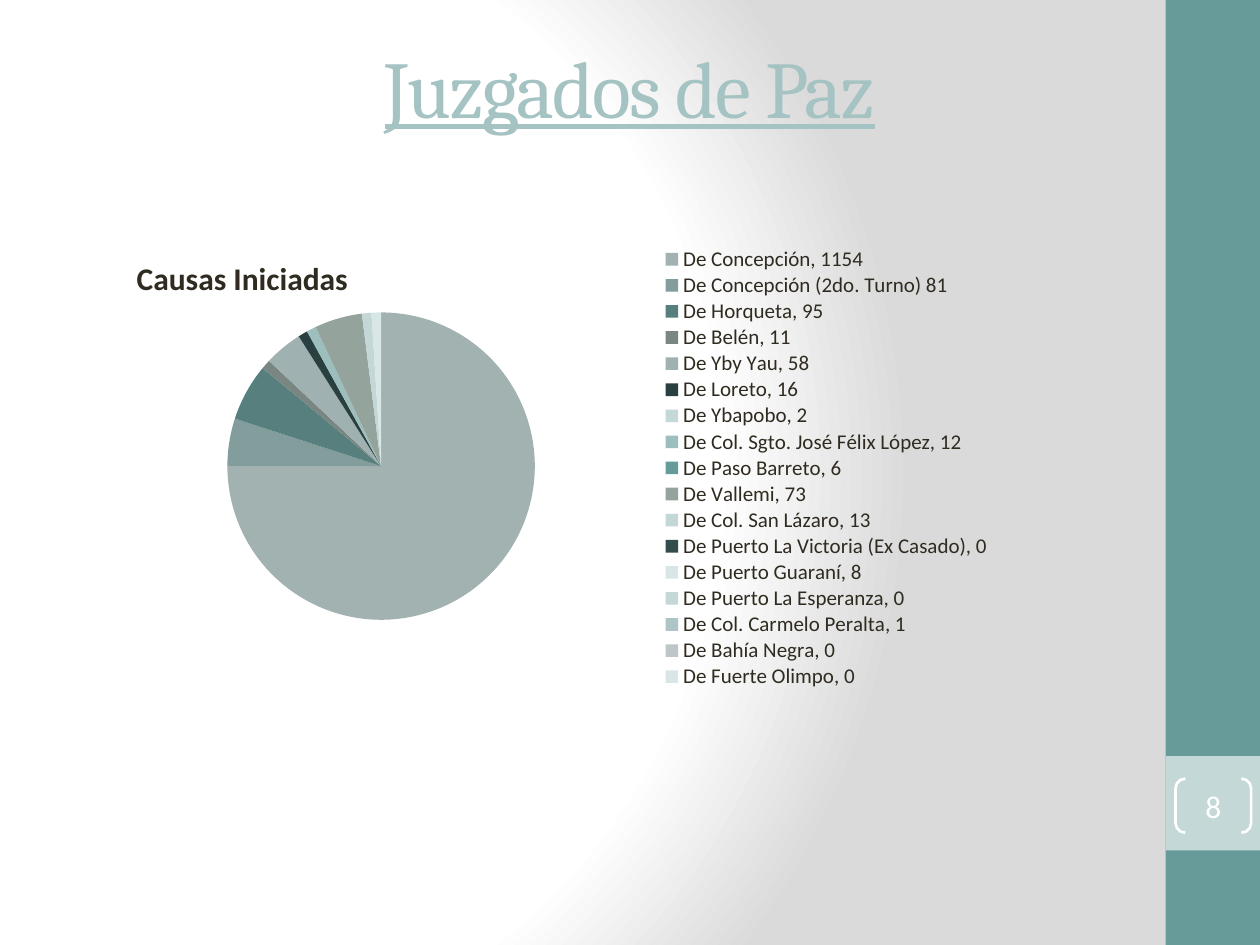
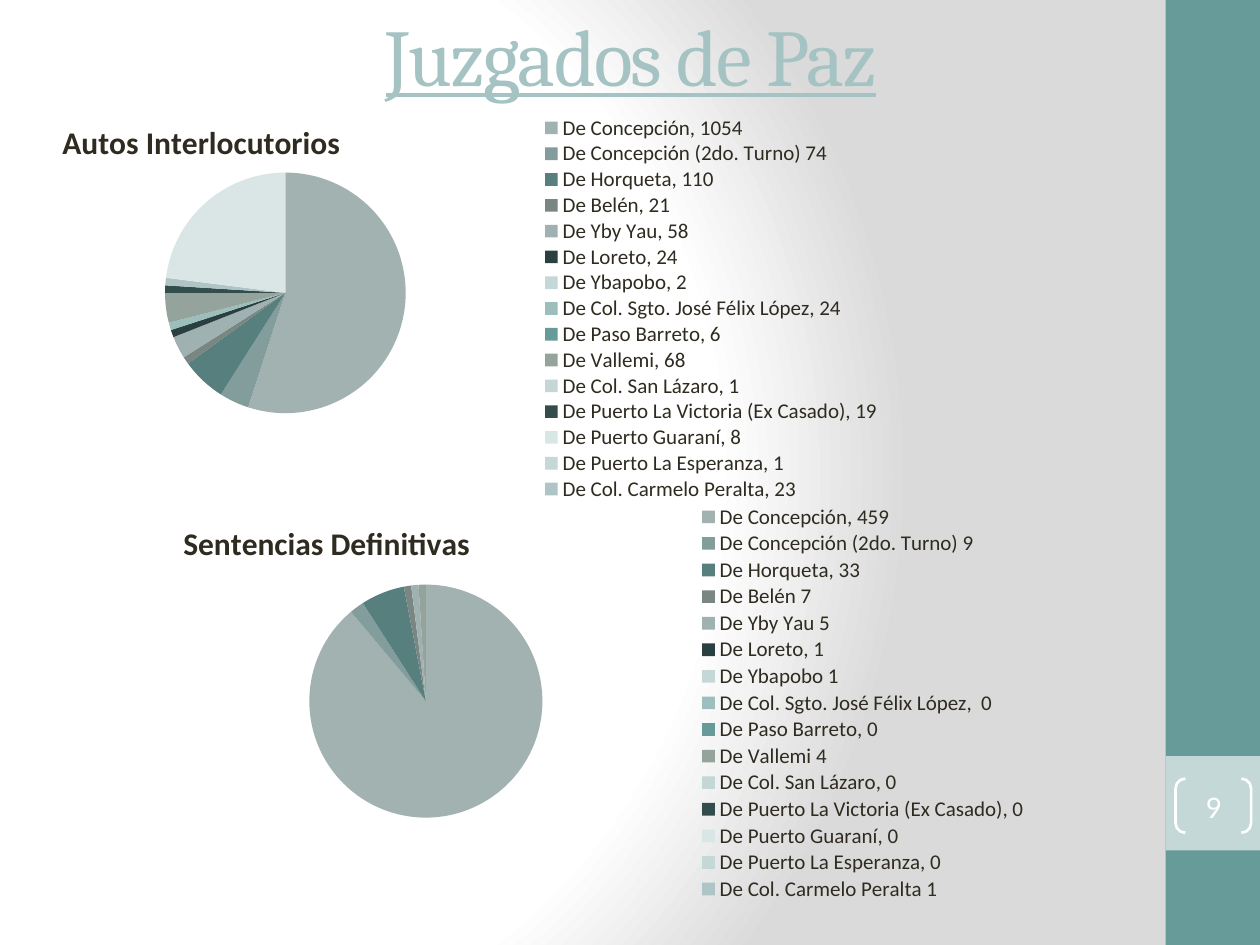
from lxml import etree
from pptx import Presentation
from pptx import util as u
from pptx.chart.data import CategoryChartData
from pptx.dml.color import RGBColor
from pptx.enum import chart as charts, shapes, text
from pptx.oxml import parse_xml
from pptx.oxml.ns import nsdecls, qn

WHITE, TEAL, PALE_TEAL = "FFFFFF", "679B9A", "C3D8D7"
TITLE_COLOR, INK, SHADE = "A4C3C2", "2F2B20", "DADADA"
SLICE_COLORS = (
    "A1B2B1", "829D9B", "567F7E", "7A8682", "A0B1B1", "2A3F3F",
    "C3D8D7", "9CBEBD", "679B9A", "95A39D", "C2D7D6", "334D4D",
    "D9E6E6", "C3D8D7", "AEC4C6", "BFC6C8", "D9E6E5",
)
COURTS = (
    "Concepción", "Concepción (2do. Turno)", "Horqueta", "Belén", "Yby Yau",
    "Loreto", "Ybapobo", "Col. Sgto. José Félix López", "Paso Barreto",
    "Vallemi", "Col. San Lázaro", "Puerto La Victoria (Ex Casado)",
    "Puerto Guaraní", "Puerto La Esperanza", "Col. Carmelo Peralta",
    "Bahía Negra", "Fuerte Olimpo",
)
STARTED_CASES = (", 1154", " 81", ", 95", ", 11", ", 58", ", 16", ", 2", ", 12", ", 6",
                 ", 73", ", 13", ", 0", ", 8", ", 0", ", 1", ", 0", ", 0")
INTERLOCUTORY_ORDERS = (", 1054", " 74", ", 110", ", 21", ", 58", ", 24", ", 2", ", 24",
                        ", 6", ", 68", ", 1", ", 19", ", 8", ", 1", ", 23", ", 0", ", 434")
FINAL_JUDGMENTS = (", 459", " 9", ", 33", " 7", " 5", ", 1", " 1", ",  0", ", 0",
                   " 4", ", 0", ", 0", ", 0", ", 0", " 1", ", 0", ", 0")


def color(value):
    return RGBColor.from_string(value)


def inches(box):
    return [u.Inches(length) for length in box]


def apply_format(target, values):
    for name, value in values.items():
        setattr(target, name, value)


def format_font(font, face, size, ink, **extra):
    apply_format(font, {"name": face, "size": u.Pt(size), **extra})
    font.color.rgb = color(ink)


def write_line(shape, words, face, size, ink, **extra):
    frame = shape.text_frame
    apply_format(frame, {"word_wrap": True, "vertical_anchor": text.MSO_ANCHOR.MIDDLE})
    paragraph = frame.paragraphs[0]
    paragraph.alignment = text.PP_ALIGN.CENTER
    run = paragraph.add_run()
    run.text = words
    format_font(run.font, face, size, ink, **extra)
    return run


def add_background(slide):
    slide.background.fill.solid()
    solid = slide.background._cSld.bg.bgPr[0]
    stops = "".join(
        f'<a:gs pos="{place * 1000}"><a:srgbClr val="{tint}"/></a:gs>'
        for place, tint in ((0, WHITE), (75, WHITE), (100, SHADE)))
    gradient = parse_xml(
        f'<a:gradFill {nsdecls("a")} rotWithShape="1"><a:gsLst>{stops}</a:gsLst>'
        '<a:path path="circle"><a:fillToRect l="20000" t="50000" r="100000" b="50000"/>'
        '</a:path></a:gradFill>')
    solid.getparent().replace(solid, gradient)


def add_block(slide, box, fill):
    block = slide.shapes.add_shape(shapes.MSO_SHAPE.RECTANGLE, *inches(box))
    block.shadow.inherit = False
    block.fill.solid()
    block.fill.fore_color.rgb = color(fill)
    block.line.fill.background()


def add_title(slide, left, top):
    title = slide.shapes.add_textbox(*inches((left, top, 9, 0.77)))
    run = write_line(title, "Juzgados de Paz", "Cambria", 46, TITLE_COLOR, underline=True)
    run.font._element.set("spc", "-100")


def add_page_number(slide, number):
    bracket = slide.shapes.add_shape(shapes.MSO_SHAPE.DOUBLE_BRACKET,
                                     *inches((9.33, 6.18, 0.6, 0.43)))
    bracket.shadow.inherit = False
    bracket.adjustments[0] = 0.18
    bracket.fill.background()
    bracket.line.color.rgb = color(WHITE)
    bracket.line.width = u.Pt(1.5)
    apply_format(bracket.text_frame, {f"margin_{side}": 0
                                      for side in ("left", "top", "right", "bottom")})
    write_line(bracket, str(number), "Calibri", 18, WHITE)


def place_part(parent, previous, place, chart_size, inner=False):
    for old in parent.findall(qn("c:layout")):
        parent.remove(old)
    layout = etree.Element(qn("c:layout"))
    manual = etree.SubElement(layout, qn("c:manualLayout"))
    fractions = [length / whole for length, whole in zip(place, chart_size * 2)]
    settings = [("layoutTarget", "inner")] if inner else []
    settings += [("xMode", "edge"), ("yMode", "edge"), *zip("xywh", fractions)]
    for name, value in settings:
        etree.SubElement(manual, qn(f"c:{name}")).set("val", str(value))
    if previous is None:
        parent.insert(0, layout)
    else:
        previous.addnext(layout)


def hide_legend_entries(legend, count):
    position = legend.find(qn("c:legendPos"))
    for index in reversed(range(len(COURTS) - count, len(COURTS))):
        position.addnext(parse_xml(
            f'<c:legendEntry {nsdecls("c")}><c:idx val="{index}"/>'
            '<c:delete val="1"/></c:legendEntry>'))


def add_pie(slide, box, name, tails, title_at, plot_at, legend_at, hidden=0):
    size = box[2:]
    counts = [int(tail.strip(", ")) for tail in tails]
    data = CategoryChartData()
    data.categories = [f"De {court}{tail}" for court, tail in zip(COURTS, tails)]
    data.add_series(name, [round(100 * count / sum(counts)) for count in counts])
    chart = slide.shapes.add_chart(charts.XL_CHART_TYPE.PIE, *inches(box), data).chart
    format_font(chart.font, "Calibri", 10, INK)
    root = chart.element.find(qn("c:chart"))
    root.addnext(parse_xml(
        f'<c:spPr {nsdecls("c", "a")}><a:noFill/><a:ln><a:noFill/></a:ln></c:spPr>'))

    plot = chart.plots[0]
    plot.vary_by_categories = True
    for index, tint in enumerate(SLICE_COLORS):
        fill = plot.series[0].points[index].format.fill
        fill.solid()
        fill.fore_color.rgb = color(tint)
    place_part(root.find(qn("c:plotArea")), None, plot_at, size, inner=True)

    chart.has_title = True
    run = chart.chart_title.text_frame.paragraphs[0].add_run()
    run.text = name
    format_font(run.font, "Calibri", 18, INK, bold=True)
    title = root.find(qn("c:title"))
    place_part(title, title.find(qn("c:tx")), title_at, size)

    chart.has_legend = True
    apply_format(chart.legend, {"position": charts.XL_LEGEND_POSITION.RIGHT,
                                "include_in_layout": False})
    format_font(chart.legend.font, "Calibri", 12, INK)
    legend = root.find(qn("c:legend"))
    place_part(legend, legend.find(qn("c:legendPos")), legend_at, size)
    hide_legend_entries(legend, hidden)


def add_court_slide(presentation, number, title_left, title_top):
    slide = presentation.slides.add_slide(presentation.slide_layouts[6])
    add_background(slide)
    add_block(slide, (9.25, 0, 0.75, 7.5), TEAL)
    add_block(slide, (9.25, 6, 0.75, 0.75), PALE_TEAL)
    add_title(slide, title_left, title_top)
    add_page_number(slide, number)
    return slide


def main():
    presentation = Presentation()
    presentation.slide_width, presentation.slide_height = inches((10, 7.5))

    slide = add_court_slide(presentation, 8, 0.5, 0.3)
    add_pie(slide, (0.83, 1.86, 7.95, 3.7), "Causas Iniciadas", STARTED_CASES,
            (0.21, 0.13), (0.2, 0.62, 3.99, 2.44), (4.02, 0.09, 3.42, 3.53))

    slide = add_court_slide(presentation, 9, 0.51, 0.05)
    add_pie(slide, (0.43, 0.84, 7.17, 3.15), "Autos Interlocutorios", INTERLOCUTORY_ORDERS,
            (0.02, 0.07), (0.18, 0.53, 3.31, 1.91), (3.6, 0.07, 3.23, 3.08), hidden=2)
    add_pie(slide, (1.3, 3.99, 7.73, 3.18), "Sentencias Definitivas", FINAL_JUDGMENTS,
            (0.11, 0.1), (0.19, 0.65, 3.78, 1.85), (3.89, 0, 3.32, 3.18), hidden=2)

    presentation.save("out.pptx")


if __name__ == "__main__":
    main()
